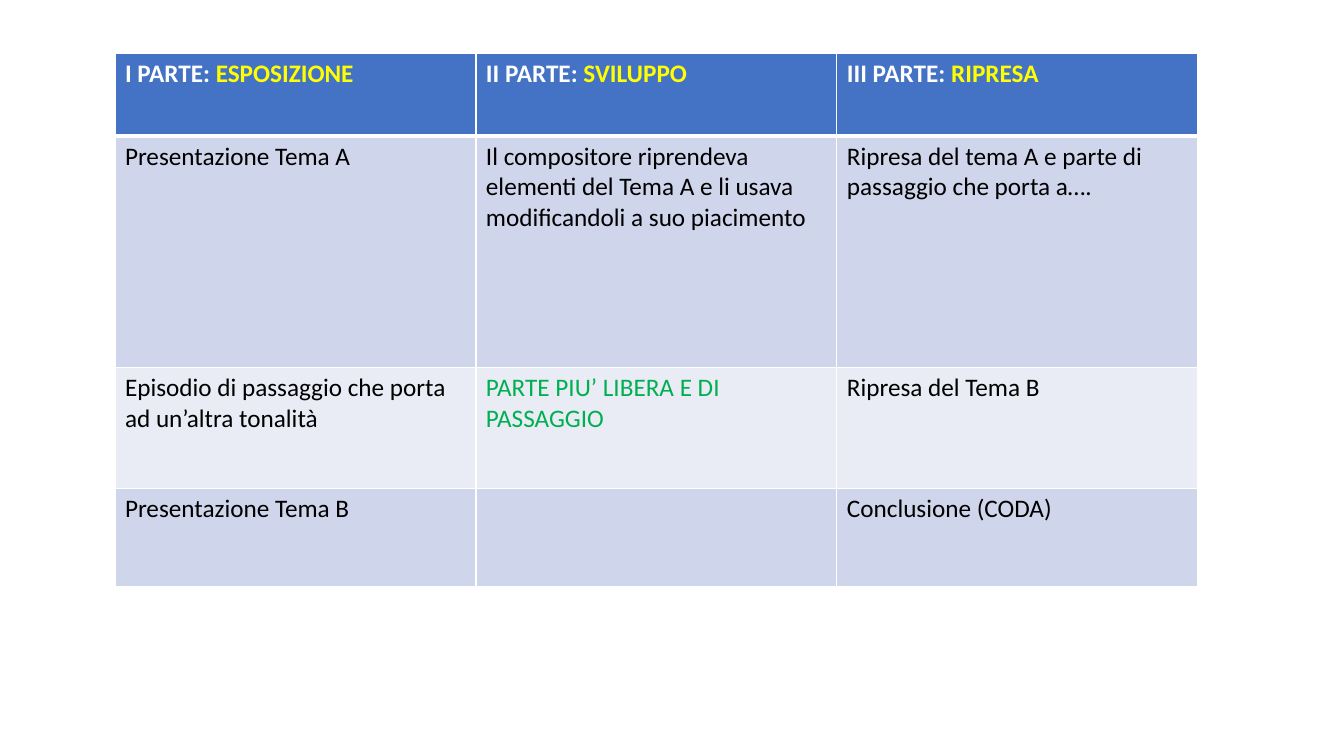
import pptx
import pptx.dml.color
import pptx.util
from lxml import etree
from pptx.oxml.ns import qn

EMU_PER_PX = 9144  # 100 px to the inch
WHITE, YELLOW, BLACK, GREEN = "FFFFFF", "FFFF00", "000000", "00B050"
HEADER_FILL = "4472C4"
BAND_FILLS = ["E9EBF5", "CFD5EA"]
COLUMN_WIDTH = 358
ROW_HEIGHTS = [82, 230, 120, 97]

HEADINGS = [
    [("I PARTE: ", WHITE), ("ESPOSIZIONE", YELLOW)],
    [("II PARTE: ", WHITE), ("SVILUPPO", YELLOW)],
    [("III PARTE: ", WHITE), ("RIPRESA", YELLOW)],
]
SECTIONS = [
    [
        [("Presentazione Tema A", BLACK)],
        [("Il compositore riprendeva elementi del Tema A e li usava "
          "modificandoli a suo piacimento", BLACK)],
        [("Ripresa del tema A e parte di passaggio che porta a….", BLACK)],
    ],
    [
        [("Episodio di passaggio che porta ad un’altra tonalità", BLACK)],
        [("PARTE PIU’ LIBERA E DI PASSAGGIO", GREEN)],
        [("Ripresa del Tema B", BLACK)],
    ],
    [
        [("Presentazione Tema B", BLACK)],
        [],
        [("Conclusione (CODA)", BLACK)],
    ],
]


def px(length):
    return pptx.util.Emu(length * EMU_PER_PX)


def color(value):
    return pptx.dml.color.RGBColor.from_string(value)


def add_border(cell, side, points):
    properties = cell._tc.get_or_add_tcPr()
    line = etree.SubElement(properties, qn(f"a:ln{side}"), w=str(pptx.util.Pt(points)))
    fill = etree.SubElement(line, qn("a:solidFill"))
    etree.SubElement(fill, qn("a:srgbClr"), val=WHITE)


def fill_cell(cell, runs, background, bold, top, bottom):
    """Style one cell; top and bottom are border widths in points."""
    for side, points in (("L", 1), ("R", 1), ("T", top), ("B", bottom)):
        add_border(cell, side, points)
    cell.fill.solid()
    cell.fill.fore_color.rgb = color(background)
    paragraph = cell.text_frame.paragraphs[0]
    for text, text_color in runs:
        run = paragraph.add_run()
        run.text = text
        run.font.name = "Calibri"
        run.font.size = pptx.util.Pt(18)
        run.font.bold = bold
        run.font.color.rgb = color(text_color)


def add_sonata_table(slide):
    rows = [HEADINGS] + SECTIONS
    table = slide.shapes.add_table(
        len(rows), len(HEADINGS), px(114), px(53),
        px(COLUMN_WIDTH * len(HEADINGS)), px(sum(ROW_HEIGHTS))).table
    for column in table.columns:
        column.width = px(COLUMN_WIDTH)
    for row_index, (row, height) in enumerate(zip(rows, ROW_HEIGHTS)):
        table.rows[row_index].height = px(height)
        is_header = row_index == 0
        background = HEADER_FILL if is_header else BAND_FILLS[row_index % 2]
        top = 3 if row_index == 1 else 1
        bottom = 3 if is_header else 1
        for column_index, runs in enumerate(row):
            fill_cell(table.cell(row_index, column_index), runs,
                      background, is_header, top, bottom)


def main():
    presentation = pptx.Presentation()
    presentation.slide_width = px(1333)
    presentation.slide_height = px(750)
    slide = presentation.slides.add_slide(presentation.slide_layouts[6])
    add_sonata_table(slide)
    presentation.save("out.pptx")


if __name__ == "__main__":
    main()
